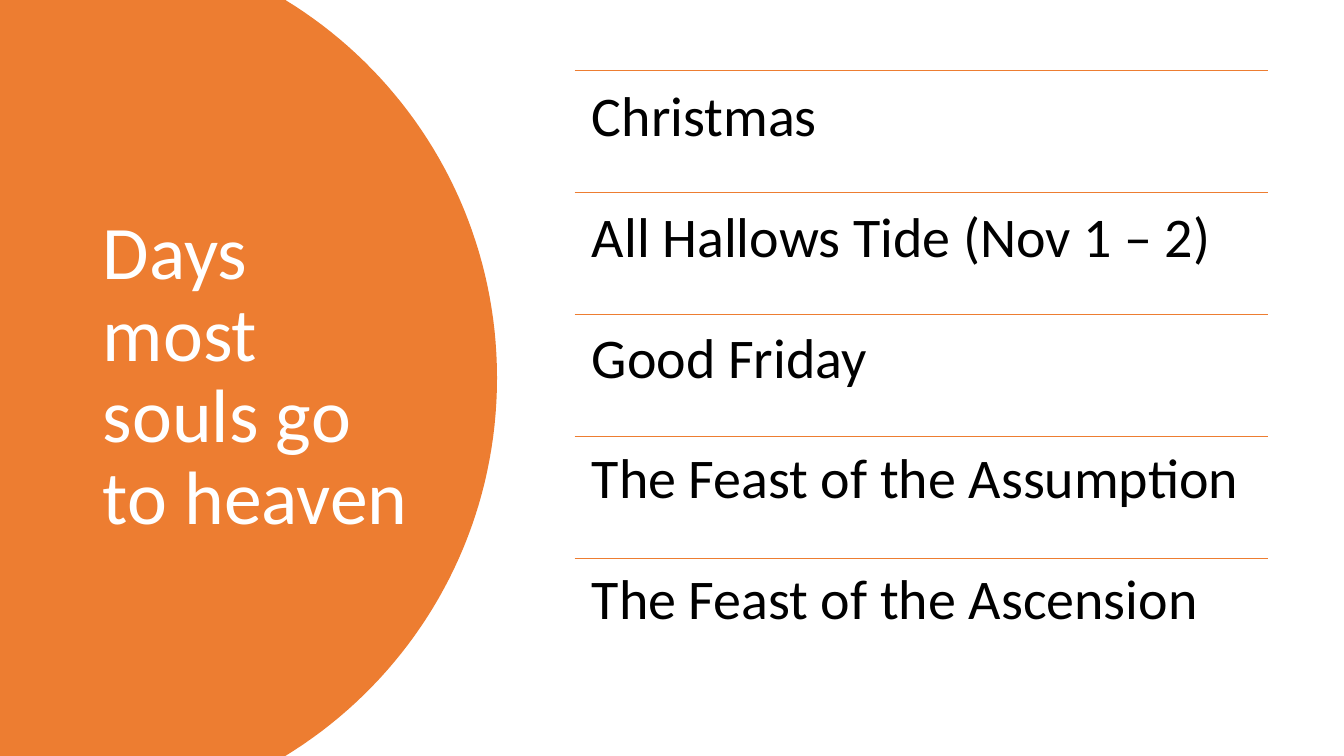
from lxml import etree
from pptx import Presentation
from pptx.dml.color import RGBColor
from pptx.enum.shapes import MSO_CONNECTOR
from pptx.enum.text import MSO_ANCHOR, MSO_AUTO_SIZE, PP_ALIGN
from pptx.oxml.ns import qn
from pptx.util import Inches, Pt

STRAIGHT = MSO_CONNECTOR.STRAIGHT
MIDDLE, TOP = MSO_ANCHOR.MIDDLE, MSO_ANCHOR.TOP
NO_AUTOFIT = MSO_AUTO_SIZE.NONE
LEFT = PP_ALIGN.LEFT

WIDTH, HEIGHT = 13.33, 7.5
ORANGE, WHITE, BLACK = "ED7D31", "FFFFFF", "000000"
FONT = "Calibri"
LIST_LEFT, LIST_TOP, LIST_WIDTH, ROW = 5.7, 0.7, 6.88, 1.21
LIST_SIZE, LINE_SPACING, LINE_FACTOR = 40, 0.9, 1.22
DOME_EDGE, DOME_TIP = 2.83, 4.93
CURVE_STEPS = 40

HEADLINE = "Days most souls go to heaven"
FEASTS = [
    "Christmas",
    "All Hallows Tide (Nov 1 – 2)",
    "Good Friday",
    "The Feast of the Assumption",
    "The Feast of the Ascension",
]


def color(hex_string):
    return RGBColor.from_string(hex_string)


def curve(start, pull_start, pull_end, end):
    points = []
    for step in range(CURVE_STEPS + 1):
        t = step / CURVE_STEPS
        weights = ((1 - t) ** 3, 3 * t * (1 - t) ** 2, 3 * t**2 * (1 - t), t**3)
        corners = (start, pull_start, pull_end, end)
        points.append(tuple(sum(w * c[axis] for w, c in zip(weights, corners)) for axis in (0, 1)))
    return points


class FeastSlide:
    """Draws styled elements on one slide, measured in inches."""

    def __init__(self, deck):
        self.slide = deck.slides.add_slide(deck.slide_layouts[1])

    def dome(self):
        upper = curve((DOME_EDGE, 0), (4.09, 0.77), (DOME_TIP, 2.16), (DOME_TIP, HEIGHT / 2))
        lower = [(x, HEIGHT - y) for x, y in reversed(upper[:-1])]
        outline = [(Inches(x), Inches(y)) for x, y in upper + lower + [(0, HEIGHT)]]
        builder = self.slide.shapes.build_freeform(0, 0)
        builder.add_line_segments(outline, close=True)
        dome = builder.convert_to_shape()
        dome.shadow.inherit = False
        dome.fill.solid()
        dome.fill.fore_color.rgb = color(ORANGE)
        dome.line.fill.background()
        self.slide.shapes._spTree.insert(2, dome._element)

    def fill_placeholder(self, holder, box, lines, size, ink, anchor, inset, gap):
        holder.left, holder.top, holder.width, holder.height = map(Inches, box)
        frame = holder.text_frame
        frame.text = "\n".join(lines)
        frame.word_wrap = True
        frame.auto_size = NO_AUTOFIT
        frame.vertical_anchor = anchor
        frame.margin_left = frame.margin_right = Inches(inset[0])
        frame.margin_top = frame.margin_bottom = Inches(inset[1])
        for paragraph in frame.paragraphs:
            paragraph.alignment = LEFT
            paragraph.line_spacing = LINE_SPACING
            paragraph.space_before = Pt(0)
            paragraph.space_after = Pt(gap)
            properties = paragraph._p.get_or_add_pPr()
            properties.set("marL", "0")
            properties.set("indent", "0")
            etree.SubElement(properties, qn("a:buNone"))
            font = paragraph.runs[0].font
            font.name, font.size = FONT, Pt(size)
            font.color.rgb = color(ink)

    def title(self, headline):
        self.fill_placeholder(self.slide.shapes.title, (0.92, 0.7, 3.23, 6.09), [headline],
                              54, WHITE, MIDDLE, (0.1, 0.05), 6)

    def feasts(self, names):
        gap = round(ROW * 72 - LIST_SIZE * LINE_FACTOR * LINE_SPACING, 1)
        box = (LIST_LEFT, LIST_TOP, LIST_WIDTH, ROW * len(names))
        self.fill_placeholder(self.slide.placeholders[1], box, names,
                              LIST_SIZE, BLACK, TOP, (0.17, 0.17), gap)
        for row in range(len(names)):
            self.rule(LIST_TOP + row * ROW)

    def rule(self, y):
        rule = self.slide.shapes.add_connector(
            STRAIGHT, Inches(LIST_LEFT), Inches(y), Inches(LIST_LEFT + LIST_WIDTH), Inches(y))
        rule.line.color.rgb = color(ORANGE)
        rule.line.width = Pt(1)
        etree.SubElement(rule._element.spPr, qn("a:effectLst"))


def main():
    deck = Presentation()
    deck.slide_width, deck.slide_height = Inches(WIDTH), Inches(HEIGHT)
    page = FeastSlide(deck)
    page.dome()
    page.title(HEADLINE)
    page.feasts(FEASTS)
    deck.save("out.pptx")


if __name__ == "__main__":
    main()
